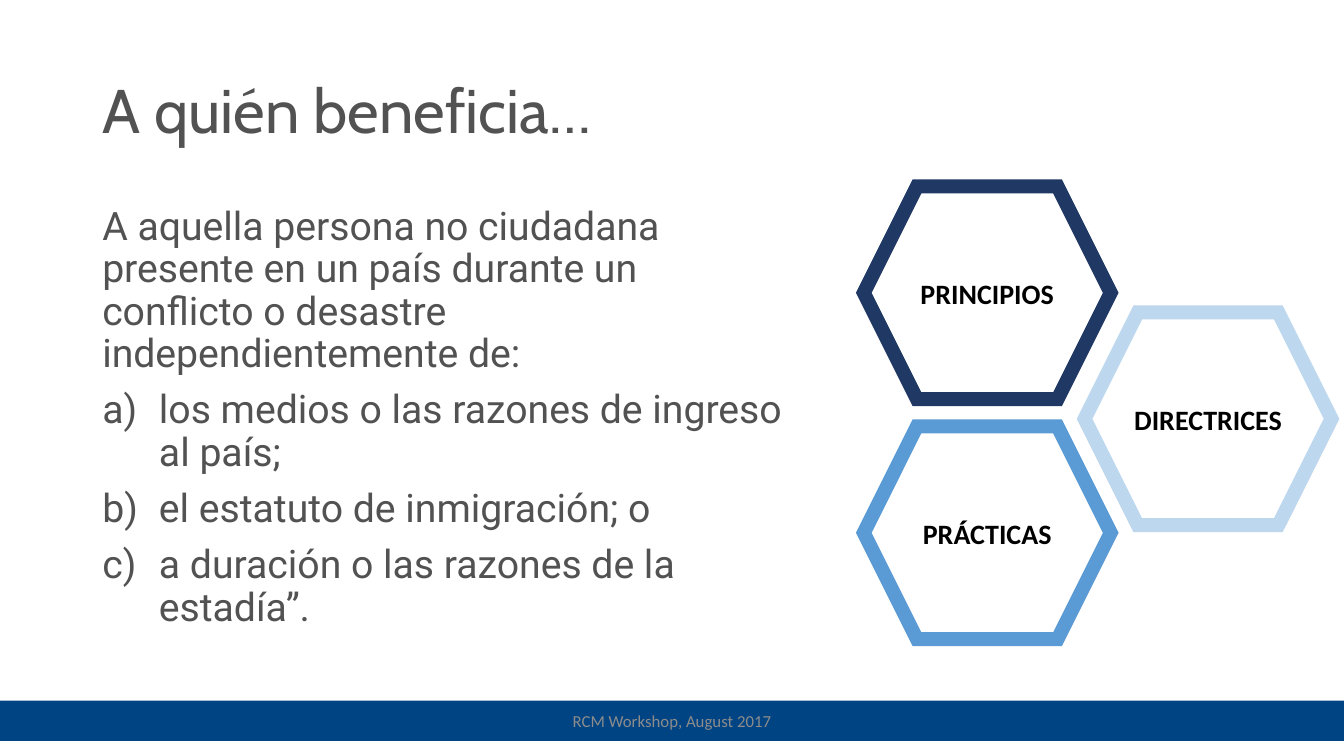
from pptx import Presentation
from pptx.dml.color import RGBColor
from pptx.enum.shapes import MSO_SHAPE
from pptx.enum.text import MSO_ANCHOR, PP_ALIGN
from pptx.oxml.ns import qn
from pptx.util import Pt
from lxml import etree

RECTANGLE = MSO_SHAPE.RECTANGLE
HEXAGON = MSO_SHAPE.HEXAGON
MIDDLE = MSO_ANCHOR.MIDDLE
CENTER = PP_ALIGN.CENTER

SLIDE_WIDTH, SLIDE_HEIGHT = 960, 540
GREY = "525252"
INTRO = ("A aquella persona no ciudadana presente en un país durante un "
         "conflicto o desastre independientemente de:")
CONDITIONS = ["los medios o las razones de ingreso al país;",
              "el estatuto de inmigración; o",
              "a duración o las razones de la estadía”."]
# Label, outline colour, column, vertical offset
HEXAGONS = [("PRINCIPIOS", "203864", 0, 0),
            ("DIRECTRICES", "BDD7EE", 1, 90),
            ("PRÁCTICAS", "5B9BD5", 0, 171.4)]


def color(value):
    return RGBColor.from_string(value)


def format_text(para, font, size, value, bold=False):
    for span in para.runs:
        span.font.name = font
        span.font.size = Pt(size)
        span.font.bold = bold
        span.font.color.rgb = color(value)


def add_text_box(page, box):
    frame = page.shapes.add_textbox(*map(Pt, box)).text_frame
    frame.word_wrap = True
    return frame


def add_labelled_shape(page, kind, box, label, size, value, bold=False):
    shape = page.shapes.add_shape(kind, *map(Pt, box))
    shape.shadow.inherit = False
    frame = shape.text_frame
    frame.text = label
    frame.word_wrap = False
    frame.vertical_anchor = MIDDLE
    para = frame.paragraphs[0]
    para.alignment = CENTER
    format_text(para, "Calibri", size, value, bold)
    return shape


def add_title(page, box):
    frame = add_text_box(page, box)
    frame.vertical_anchor = MIDDLE
    frame.text = "A quién beneficia…"
    para = frame.paragraphs[0]
    para.line_spacing = 0.9
    format_text(para, "Cabin", 44, GREY)


def add_body(page, box):
    frame = add_text_box(page, box)
    frame.text = "\n".join([INTRO] + CONDITIONS)
    for index, para in enumerate(frame.paragraphs):
        para.line_spacing = 0.9
        para.space_before = Pt(10)
        format_text(para, "Roboto", 28, GREY)
        if index > 0:
            # Lettered list with a hanging indent
            properties = para._p.get_or_add_pPr()
            properties.set("marL", str(Pt(40.5)))
            properties.set("indent", str(-Pt(40.5)))
            etree.SubElement(properties, qn("a:buFont"), typeface="+mj-lt")
            etree.SubElement(properties, qn("a:buAutoNum"), type="alphaLcParenR")


def add_hexagons(page, box):
    left, top, width, height = box
    column_step = 157.7
    for label, outline, column, offset in HEXAGONS:
        place = (left + column * column_step, top + offset, width, height)
        shape = add_labelled_shape(page, HEXAGON, place, label, 20, "000000", True)
        shape.fill.background()
        shape.line.color.rgb = color(outline)
        shape.line.width = Pt(10)
        # Sharp corners
        etree.SubElement(shape.line._get_or_add_ln(), qn("a:miter"), lim="800000")


def add_footer(page, box):
    bar = add_labelled_shape(page, RECTANGLE, box, "RCM Workshop, August 2017",
                             12, "8C8C8C")
    bar.fill.solid()
    bar.fill.fore_color.rgb = color("004483")
    bar.line.fill.background()


def main():
    deck = Presentation()
    deck.slide_width, deck.slide_height = Pt(SLIDE_WIDTH), Pt(SLIDE_HEIGHT)
    page = deck.slides.add_slide(deck.slide_layouts[6])
    add_title(page, (66, 28.8, 828, 104.4))
    add_body(page, (66, 144, 509, 342.7))
    add_footer(page, (0, 500.4, SLIDE_WIDTH, 28.8))
    add_hexagons(page, (617, 133.2, 176.4, 152))
    deck.save("out.pptx")


if __name__ == "__main__":
    main()
